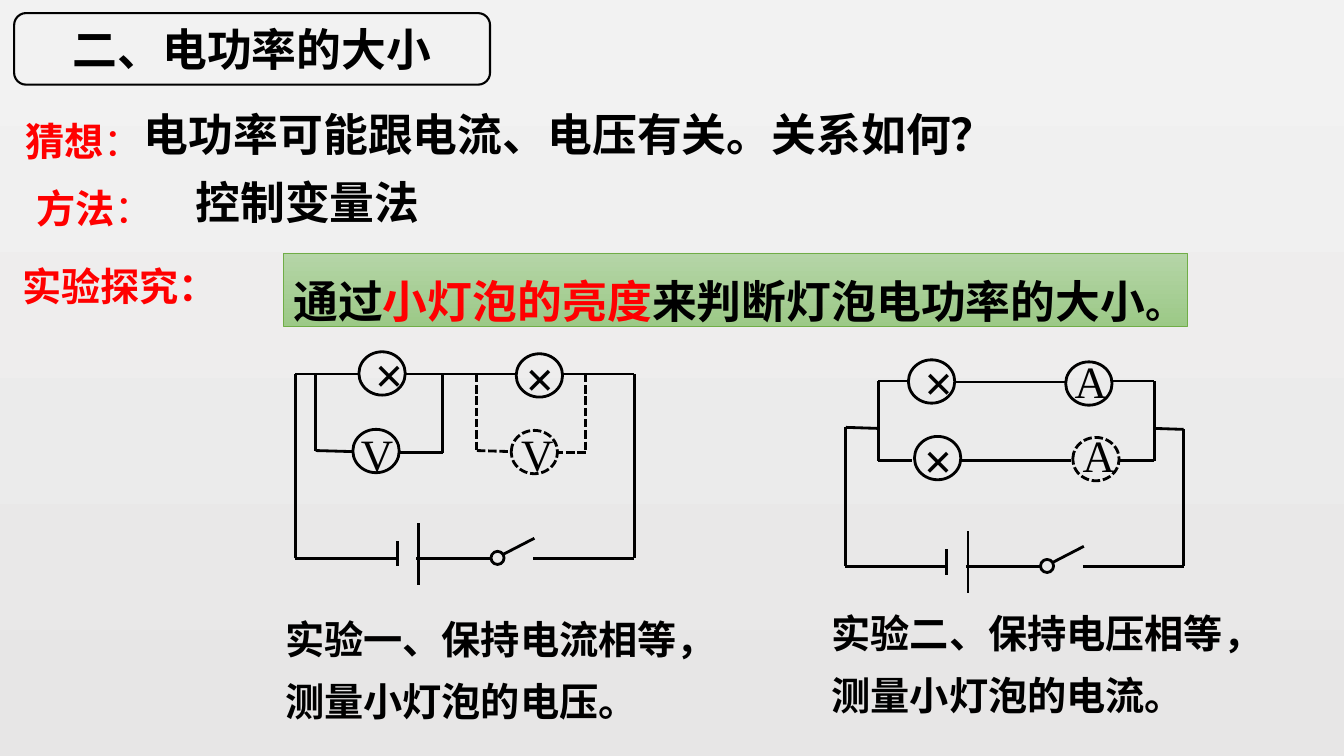
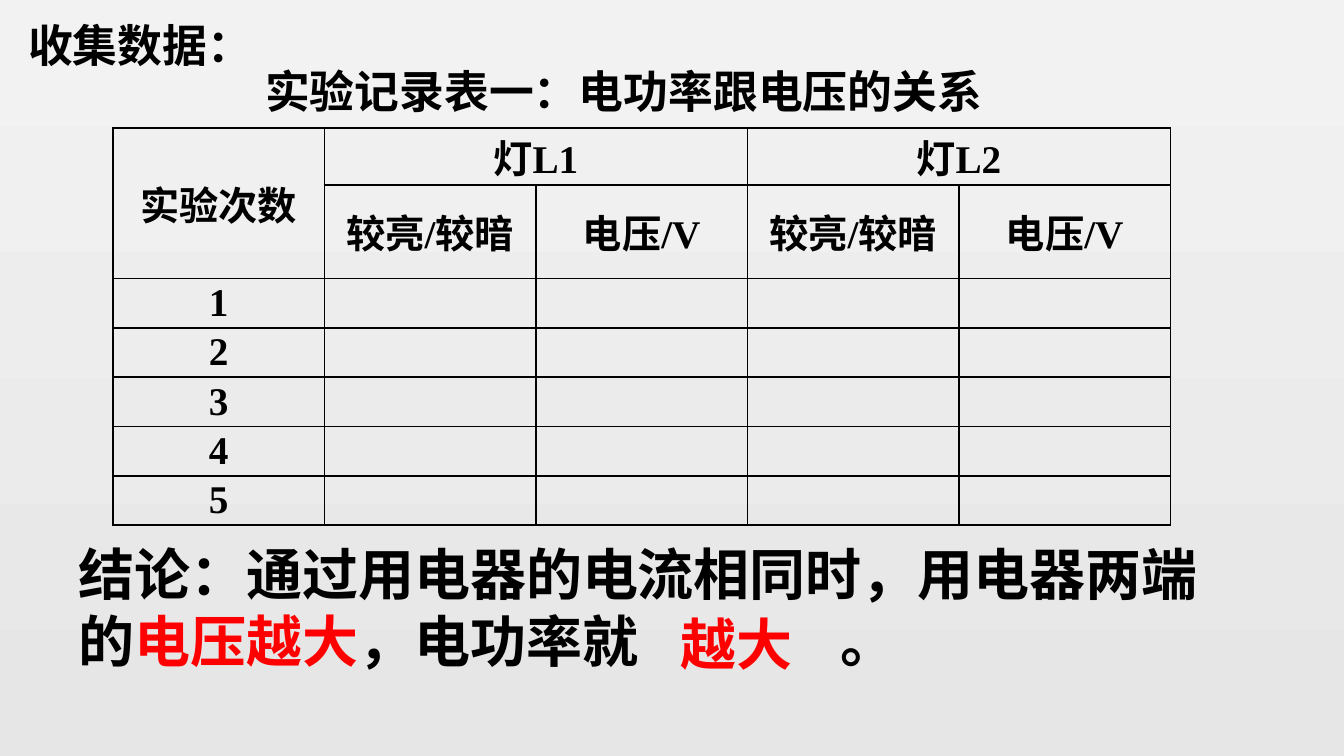
from lxml import etree
from pptx import Presentation
from pptx.dml.color import RGBColor
from pptx.enum.dml import MSO_LINE
from pptx.enum.shapes import MSO_CONNECTOR, MSO_SHAPE
from pptx.enum.text import MSO_ANCHOR, MSO_AUTO_SIZE, PP_ALIGN
from pptx.oxml.ns import qn
from pptx.util import Inches, Pt

BLACK = RGBColor(0x00, 0x00, 0x00)
RED = RGBColor(0xFF, 0x00, 0x00)
PAGE_TOP = RGBColor(0xF2, 0xF2, 0xF2)
PAGE_BOTTOM = RGBColor(0xE7, 0xE6, 0xE6)
BANNER_TOP = RGBColor(0xB5, 0xD5, 0xA7)
BANNER_BOTTOM = RGBColor(0x9C, 0xC9, 0x87)
BANNER_EDGE = RGBColor(0x70, 0xAD, 0x47)

SERIF = "Times New Roman"
SANS = "Calibri"
CHINESE = "Noto Sans CJK SC"

CENTER = PP_ALIGN.CENTER
MIDDLE = MSO_ANCHOR.MIDDLE
TOP = MSO_ANCHOR.TOP
GROW = MSO_AUTO_SIZE.SHAPE_TO_FIT_TEXT
STRAIGHT = MSO_CONNECTOR.STRAIGHT
OVAL = MSO_SHAPE.OVAL
RECTANGLE = MSO_SHAPE.RECTANGLE
ROUNDED = MSO_SHAPE.ROUNDED_RECTANGLE
DASH = MSO_LINE.SQUARE_DOT

WIRE = 2
DIAL_WIDTH, DIAL_HEIGHT = 0.46, 0.43


def inches(*lengths):
    return [Inches(length) for length in lengths]


def shade(fill, top, bottom):
    fill.gradient()
    fill.gradient_angle = 270
    for stop, color in zip(fill.gradient_stops, (top, bottom)):
        stop.color.rgb = color


def add_page(deck):
    page = deck.slides.add_slide(deck.slide_layouts[6])
    shade(page.background.fill, PAGE_TOP, PAGE_BOTTOM)
    return page


def write(para, spans, size, font=SERIF, bold=True):
    """Add runs; each span is a text followed by optional overrides."""
    for text, *options in spans:
        style = {"color": BLACK, "size": size, "bold": bold, "underline": None}
        style.update(*options)
        span = para.add_run()
        span.text = text
        span.font.name = font
        span.font.size = Pt(style["size"])
        span.font.bold = style["bold"]
        span.font.underline = style["underline"]
        span.font.color.rgb = style["color"]
        east_asian = etree.SubElement(span.font._element, qn("a:ea"))
        east_asian.set("typeface", CHINESE)


def add_text(shapes, place, spans, size, font=SERIF, bold=True, align=None,
             spacing=None, grow=True, wrap=True):
    box = shapes.add_textbox(*inches(*place))
    frame = box.text_frame
    frame.word_wrap = wrap
    if grow:
        frame.auto_size = GROW
    para = frame.paragraphs[0]
    para.alignment = align
    para.line_spacing = spacing
    write(para, spans, size, font, bold)
    return box


def add_outline(shapes, kind, place, width, color=BLACK, dash=None):
    shape = shapes.add_shape(kind, *inches(*place))
    shape.shadow.inherit = False
    shape.fill.background()
    shape.line.color.rgb = color
    shape.line.width = Pt(width)
    if dash:
        shape.line.dash_style = dash
    return shape


def fill_shape_text(shape, spans, size, font, anchor, align, spacing=None):
    frame = shape.text_frame
    frame.word_wrap = True
    frame.vertical_anchor = anchor
    para = frame.paragraphs[0]
    para.alignment = align
    para.line_spacing = spacing
    write(para, spans, size, font)


class Circuit:
    """A diagram drawn relative to the top left corner of its outer loop."""

    def __init__(self, page, left, top):
        self.left, self.top = left, top
        self.shapes = page.shapes.add_group_shape().shapes

    def wire(self, *points, dash=None):
        for (x1, y1), (x2, y2) in zip(points, points[1:]):
            line = self.shapes.add_connector(STRAIGHT, *inches(
                self.left + x1, self.top + y1, self.left + x2, self.top + y2))
            line.line.color.rgb = BLACK
            line.line.width = Pt(WIRE)
            if dash:
                line.line.dash_style = dash
            etree.SubElement(line._element.spPr, qn("a:effectLst"))

    def circle(self, x, y, width, height, dash=None):
        add_outline(self.shapes, OVAL,
                    (self.left + x, self.top + y, width, height), WIRE, dash=dash)

    def device(self, symbol, x, y, label, dash=None):
        """Draw a dial at x, y; label is the place of its symbol."""
        self.circle(x, y, DIAL_WIDTH, DIAL_HEIGHT, dash)
        label_x, label_y, width, height = label
        is_lamp = symbol == "×"
        add_text(self.shapes,
                 (self.left + label_x, self.top + label_y, width, height),
                 [(symbol,)], 36 if is_lamp else 32, bold=is_lamp, align=CENTER)

    def source_and_switch(self):
        base = 1.84
        self.wire((0, base), (1, base))
        self.wire((1.01, 1.67), (1.01, 1.92))
        self.wire((1.22, 1.49), (1.22, 2.1))
        self.wire((1.2, base), (1.94, base))
        self.circle(1.94, 1.77, 0.13, 0.13)
        self.wire((2.06, 1.8), (2.37, 1.64))
        self.wire((2.36, base), (3.36, base))

    def first_lamp(self):
        self.device("×", 0.63, -0.21, (0.69, -0.35, 0.35, 0.61))


def series_circuit(page, left, top):
    circuit = Circuit(page, left, top)
    circuit.source_and_switch()
    circuit.first_lamp()
    circuit.device("×", 2.19, -0.19, (2.18, -0.31, 0.49, 0.61))
    circuit.device("V", 0.57, 0.56, (0.55, 0.48, 0.49, 0.48))
    circuit.device("V", 2.14, 0.57, (2.14, 0.48, 0.49, 0.48), DASH)
    circuit.wire((0, 1.84), (0, 0.01), (0.62, 0.01))
    circuit.wire((1.1, 0.01), (2.19, 0.01))
    circuit.wire((2.64, 0.01), (3.36, 0.01), (3.36, 1.84))
    circuit.wire((0.2, 0.01), (0.2, 0.77), (0.56, 0.78))
    circuit.wire((1.46, 0.01), (1.46, 0.79), (1.02, 0.79))
    circuit.wire((1.8, 0.01), (1.8, 0.77), (2.13, 0.78), dash=DASH)
    circuit.wire((2.88, 0.01), (2.88, 0.79), (2.59, 0.79), dash=DASH)


def parallel_circuit(page, left, top):
    circuit = Circuit(page, left, top)
    circuit.source_and_switch()
    circuit.first_lamp()
    circuit.device("A", 2.19, -0.19, (2.18, -0.32, 0.49, 0.64))
    circuit.device("×", 0.69, 0.55, (0.68, 0.43, 0.49, 0.71))
    circuit.device("A", 2.26, 0.56, (2.26, 0.41, 0.49, 0.64), DASH)
    circuit.wire((0.63, 0), (0.33, 0), (0.33, 0.79), (0.67, 0.79))
    circuit.wire((2.65, 0), (3.07, 0), (3.07, 0.79), (2.72, 0.79))
    circuit.wire((1.1, 0.01), (2.19, 0.01))
    circuit.wire((1.15, 0.79), (2.24, 0.79))
    circuit.wire((0.33, 0.47), (0.01, 0.46), (0.01, 1.84))
    circuit.wire((3.07, 0.47), (3.36, 0.48), (3.36, 1.84))


def experiment_page(deck):
    page = add_page(deck)
    shapes = page.shapes
    heading = add_outline(shapes, ROUNDED, (0.14, 0.13, 4.72, 0.71), 1.5)
    fill_shape_text(heading, [("二、电功率的大小",)], 32, CHINESE, MIDDLE, CENTER)

    banner = add_outline(shapes, RECTANGLE, (2.81, 2.51, 8.97, 0.73), 0.5, BANNER_EDGE)
    shade(banner.fill, BANNER_TOP, BANNER_BOTTOM)
    fill_shape_text(banner, [
        ("通过",), ("小灯泡的亮度", {"color": RED}),
        ("来判断灯泡电功率的大小",), ("。", {"size": 28}),
    ], 32, SERIF, TOP, PP_ALIGN.LEFT, 1.3)

    series_circuit(page, 2.93, 3.7)
    parallel_circuit(page, 8.38, 3.78)

    red, plain = {"color": RED}, {"color": RED, "bold": False}
    for place, spans in (
        ((0.15, 0.97, 1.22, 0.69), [("猜想", red), ("：", plain)]),
        ((0.26, 1.64, 1.22, 0.69), [("方法", red), ("：", plain)]),
        ((0.12, 2.41, 1.95, 0.69), [("实验探究：", red)]),
    ):
        add_text(shapes, place, spans, 28, spacing=1.3, grow=False)
    for place, answer in (
        ((1.33, 1.01, 10.73, 0.64), "电功率可能跟电流、电压有关。关系如何？"),
        ((1.84, 1.68, 2.68, 0.64), "控制变量法"),
    ):
        add_text(shapes, place, [(answer,)], 32, SANS)
    for place, caption in (
        ((2.73, 5.92, 4.18, 1.33), "实验一、保持电流相等，测量小灯泡的电压。"),
        ((8.15, 5.86, 4.5, 1.33), "实验二、保持电压相等，测量小灯泡的电流。"),
    ):
        add_text(shapes, place, [(caption,)], 28, spacing=1.3)


def border_cell(cell):
    properties = cell._tc.get_or_add_tcPr()
    for side in ("a:lnL", "a:lnR", "a:lnT", "a:lnB"):
        line = etree.SubElement(properties, qn(side), w=str(Pt(1.5)))
        fill = etree.SubElement(line, qn("a:solidFill"))
        etree.SubElement(fill, qn("a:srgbClr"), val=str(BLACK))
    cell.fill.background()


def record_table(page, left, top, width):
    measures = ["较亮/较暗", "电压/V"]
    rows = [["实验次数", "灯L1", "", "灯L2", ""], ["", *measures, *measures]]
    rows += [[str(trial), "", "", "", ""] for trial in range(1, 6)]
    heights = [0.49, 0.93] + [0.49] * 5
    table = page.shapes.add_table(
        len(rows), 5, *inches(left, top, width, sum(heights))).table
    table.first_row = table.horz_banding = False
    for column in table.columns:
        column.width = Inches(width / 5)
    for row_index, (texts, height) in enumerate(zip(rows, heights)):
        table.rows[row_index].height = Inches(height)
        for column_index, text in enumerate(texts):
            cell = table.cell(row_index, column_index)
            border_cell(cell)
            if text:
                cell.vertical_anchor = MIDDLE
                cell.margin_left = cell.margin_right = Inches(0.07)
                cell.margin_top = cell.margin_bottom = 0
                para = cell.text_frame.paragraphs[0]
                para.alignment = CENTER
                write(para, [(text,)], 28)
    for start, end in (((0, 0), (1, 0)), ((0, 1), (0, 2)), ((0, 3), (0, 4))):
        table.cell(*start).merge(table.cell(*end))


def conclusion(page, left, top):
    box = add_text(page.shapes, (left, top, 11.83, 1.45), [
        ("结论：通过用电器的电流相同时，用电器两端的",),
        ("电压越大", {"color": RED}), ("，电功率就",),
        ("\t", {"underline": True}), ("。",),
    ], 40)
    properties = box.text_frame.paragraphs[0]._p.get_or_add_pPr()
    tabs = etree.SubElement(properties, qn("a:tabLst"))
    etree.SubElement(tabs, qn("a:tab"), pos=str(Inches(7.56)), algn="l")
    add_text(page.shapes, (left + 5.97, top + 0.7, 1.52, 0.77),
             [("越大", {"color": RED})], 40)


def data_page(deck):
    page = add_page(deck)
    record_table(page, 1.12, 1.27, 10.49)
    title = add_text(page.shapes, (2.53, 0.58, 7.41, 0.64),
                     [("实验记录表一：电功率跟电压的关系",)], 32, wrap=False)
    title.text_frame.vertical_anchor = MIDDLE
    conclusion(page, 0.68, 5.3)
    add_text(page.shapes, (0.18, 0.13, 2.73, 0.64), [("收集数据：",)], 32, SANS)


def main():
    deck = Presentation()
    deck.slide_width, deck.slide_height = inches(13.33, 7.5)
    experiment_page(deck)
    data_page(deck)
    deck.save("out.pptx")


if __name__ == "__main__":
    main()
